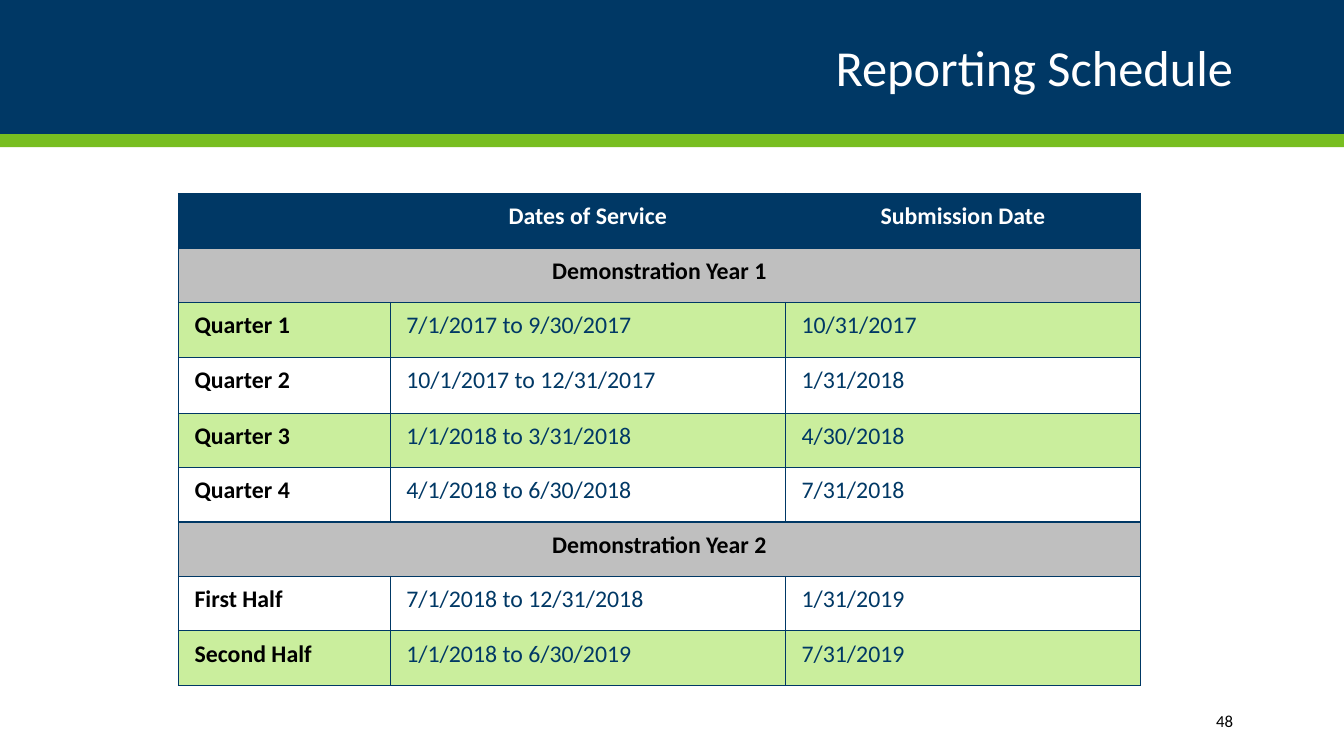
from lxml import etree
from pptx import Presentation
from pptx.dml.color import RGBColor
from pptx.enum.shapes import MSO_SHAPE
from pptx.enum.text import MSO_ANCHOR, PP_ALIGN
from pptx.oxml.ns import qn
from pptx.util import Inches, Pt

RECT = MSO_SHAPE.RECTANGLE
MIDDLE = MSO_ANCHOR.MIDDLE
LEFT, CENTER, RIGHT = PP_ALIGN.LEFT, PP_ALIGN.CENTER, PP_ALIGN.RIGHT

COLORS = {
    "navy": "003865",
    "green": "78BE21",
    "pale_green": "CAEE9D",
    "gray": "BFBFBF",
    "white": "FFFFFF",
    "black": "000000",
}
FONT = "Calibri"

HEADINGS = ["", "Dates of Service", "Submission Date"]
SCHEDULE = [
    ["Demonstration Year 1"],
    ["Quarter 1", "7/1/2017 to 9/30/2017", "10/31/2017"],
    ["Quarter 2", "10/1/2017 to 12/31/2017", "1/31/2018"],
    ["Quarter 3", "1/1/2018 to 3/31/2018", "4/30/2018"],
    ["Quarter 4", "4/1/2018 to 6/30/2018", "7/31/2018"],
    ["Demonstration Year 2"],
    ["First Half", "7/1/2018 to 12/31/2018", "1/31/2019"],
    ["Second Half", "1/1/2018 to 6/30/2019", "7/31/2019"],
]
COLUMN_WIDTHS = [2.1, 3.92, 3.52]
ROW_HEIGHTS = [0.54, 0.54, 0.55, 0.55] + [0.54] * 5


def rgb(name):
    return RGBColor.from_string(COLORS[name])


def write(frame, text, size, color="black", bold=False, align=LEFT,
          line_spacing=1.0, gap=0):
    paragraph = frame.paragraphs[0]
    paragraph.alignment = align
    paragraph.line_spacing = line_spacing
    paragraph.space_before = paragraph.space_after = Pt(gap)
    run = paragraph.add_run()
    run.text = text
    run.font.name = FONT
    run.font.size = Pt(size)
    run.font.bold = bold
    run.font.color.rgb = rgb(color)


class SlideBuilder:
    def __init__(self, slide):
        self.slide = slide

    def band(self, left, top, width, height, color):
        band = self.slide.shapes.add_shape(
            RECT, Inches(left), Inches(top), Inches(width), Inches(height))
        band.shadow.inherit = False
        band.fill.solid()
        band.fill.fore_color.rgb = rgb(color)
        band.line.fill.background()

    def label(self, left, top, width, height, text, **style):
        box = self.slide.shapes.add_textbox(
            Inches(left), Inches(top), Inches(width), Inches(height))
        box.text_frame.word_wrap = True
        box.text_frame.vertical_anchor = MIDDLE
        write(box.text_frame, text, **style)

    def table(self, left, top, widths, heights):
        table = self.slide.shapes.add_table(
            len(heights), len(widths), Inches(left), Inches(top),
            Inches(sum(widths)), Inches(sum(heights))).table
        for column, width in zip(table.columns, widths):
            column.width = Inches(width)
        for row, height in zip(table.rows, heights):
            row.height = Inches(height)
        return table

    def cell(self, cell, text, fill, **style):
        cell.margin_left = cell.margin_right = Inches(0.16)
        cell.margin_top = cell.margin_bottom = Inches(0.05)
        cell.fill.solid()
        cell.fill.fore_color.rgb = rgb(fill)
        self.borders(cell)
        if text:
            write(cell.text_frame, text, size=17, line_spacing=1.12, gap=6,
                  **style)

    def borders(self, cell):
        properties = cell._tc.get_or_add_tcPr()
        for position, side in enumerate(("a:lnL", "a:lnR", "a:lnT", "a:lnB")):
            line = etree.Element(qn(side), w=str(Pt(1)))
            solid = etree.SubElement(line, qn("a:solidFill"))
            etree.SubElement(solid, qn("a:srgbClr"), val=COLORS["navy"])
            properties.insert(position, line)


def main():
    presentation = Presentation()
    presentation.slide_width = Inches(13.33)
    presentation.slide_height = Inches(7.5)
    builder = SlideBuilder(
        presentation.slides.add_slide(presentation.slide_layouts[6]))

    # Header bands, title and page number
    builder.band(0, 0, 13.33, 1.33, "navy")
    builder.band(0, 1.33, 13.33, 0.13, "green")
    builder.label(1, 0.2, 11.33, 1, "Reporting Schedule", size=36,
                  color="white", align=RIGHT, line_spacing=0.9)
    builder.label(10.83, 6.95, 1.5, 0.4, "48", size=12, align=RIGHT)

    # Schedule heading row
    schedule = builder.table(1.77, 1.92, COLUMN_WIDTHS, ROW_HEIGHTS)
    for column, heading in enumerate(HEADINGS):
        builder.cell(schedule.cell(0, column), heading, "navy",
                     color="white", bold=True, align=CENTER)

    # Year rows span the table; period rows alternate in colour
    for row, entries in enumerate(SCHEDULE, start=1):
        if len(entries) == 1:
            schedule.cell(row, 0).merge(schedule.cell(row, 2))
            for column, text in enumerate(entries + ["", ""]):
                builder.cell(schedule.cell(row, column), text, "gray",
                             bold=True, align=CENTER)
            continue
        fill = "white" if row % 2 else "pale_green"
        for column, text in enumerate(entries):
            is_period = column == 0
            builder.cell(schedule.cell(row, column), text, fill,
                         color="black" if is_period else "navy",
                         bold=is_period)

    presentation.save("out.pptx")


if __name__ == "__main__":
    main()
